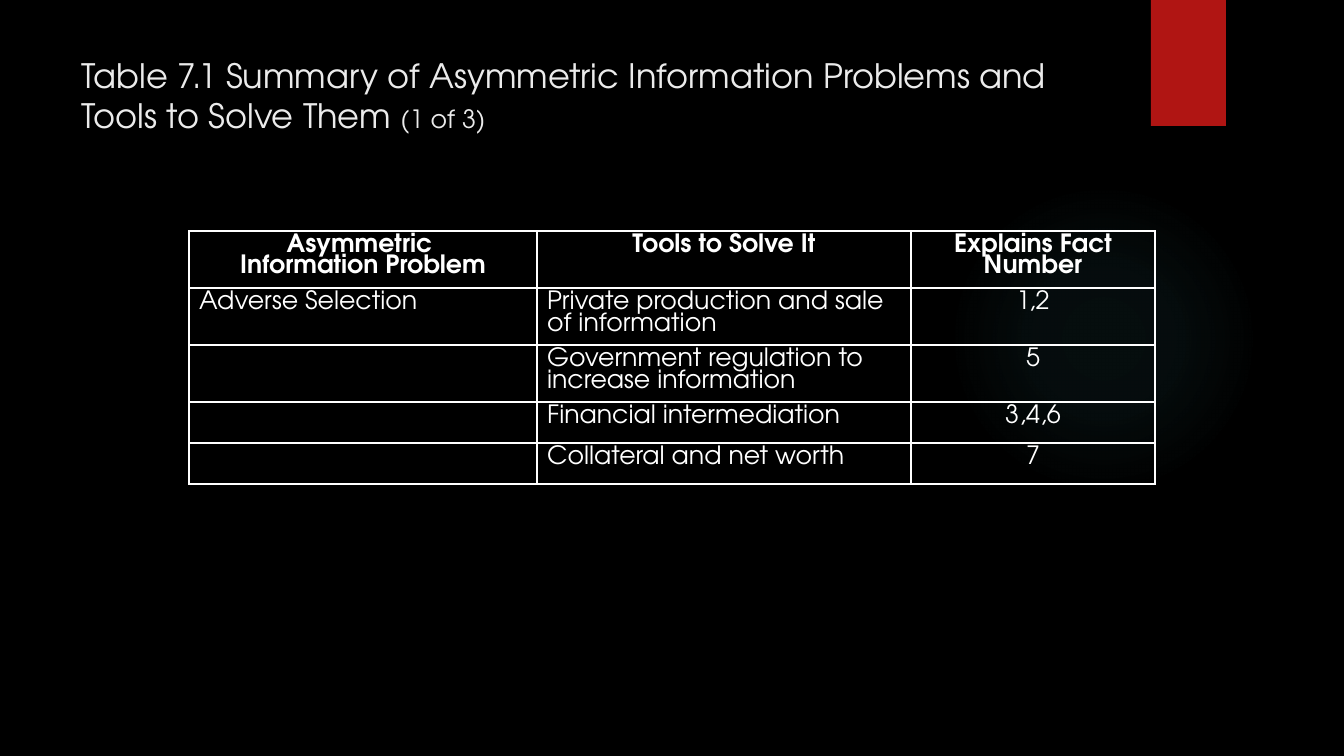
"""Build the slide that sums up adverse selection problems and their tools."""
from lxml import etree
from pptx import Presentation
from pptx import util as u
from pptx.dml.color import RGBColor
from pptx.enum import shapes, text
from pptx.oxml import parse_xml
from pptx.oxml.ns import nsdecls, qn

TITLE = [
    ("Table 7.1 Summary of Asymmetric Information Problems and Tools to Solve Them ", 24),
    ("(1 of 3)", 18),
]
ROWS = [
    ("Asymmetric \nInformation Problem", "Tools to Solve It", "Explains Fact Number"),
    ("Adverse Selection", "Private production and sale of information", "1,2"),
    ("", "Government regulation to increase information", "5"),
    ("", "Financial intermediation", "3,4,6"),
    ("", "Collateral and net worth", "7"),
]
COLUMN_WIDTHS = [348, 374, 244]
ROW_HEIGHTS = [57, 57, 57, 41, 41]
GLOW_STOPS = [(0, 7), (36, 6), (69, 0)]
COLORS = {"back": "000000", "title": "EBEBEB", "table": "FFFFFF",
          "ribbon": "B01513", "glow": "50B9C1"}
FONT = "TeX Gyre Adventor"
PX = 914400 / 100.8


def px(*lengths):
    return [u.Emu(round(length * PX)) for length in lengths]


def color(name):
    return RGBColor.from_string(COLORS[name])


def add_text(para, words, size=18, ink="table", bold=False, align=text.PP_ALIGN.LEFT):
    para.alignment = align
    for index, line in enumerate(words.split("\n")):
        if index:
            para.add_line_break()
        span = para.add_run()
        span.text = line
        span.font.name = FONT
        span.font.size = u.Pt(size)
        span.font.bold = bold
        span.font.color.rgb = color(ink)


def add_decor(page, kind, *place):
    shape = page.shapes.add_shape(kind, *px(*place))
    shape.shadow.inherit = False
    shape.line.fill.background()
    return shape


def fill_glow(shape):
    stops = "".join(
        f'<a:gs pos="{place * 1000}"><a:srgbClr val="{COLORS["glow"]}">'
        f'<a:alpha val="{alpha * 1000}"/></a:srgbClr></a:gs>'
        for place, alpha in GLOW_STOPS)
    gradient = parse_xml(
        f'<a:gradFill {nsdecls("a")} rotWithShape="1"><a:gsLst>{stops}</a:gsLst>'
        '<a:path path="circle"><a:fillToRect l="50000" t="50000" r="50000" b="50000"/>'
        '</a:path></a:gradFill>')
    shape.fill.background()
    properties = shape.element.spPr
    properties.replace(properties.find(qn("a:noFill")), gradient)


def add_borders(cell):
    properties = cell._tc.get_or_add_tcPr()
    for index, side in enumerate(("lnL", "lnR", "lnT", "lnB")):
        line = etree.Element(qn(f"a:{side}"), w=str(u.Pt(1)))
        fill = etree.SubElement(line, qn("a:solidFill"))
        etree.SubElement(fill, qn("a:srgbClr"), val=COLORS["table"])
        properties.insert(index, line)


def add_title(page):
    title = page.shapes.title
    title.left, title.top, title.width, title.height = px(71, 50, 1038, 154)
    frame = title.text_frame
    frame.word_wrap = True
    frame.auto_size = text.MSO_AUTO_SIZE.NONE
    frame.vertical_anchor = text.MSO_ANCHOR.TOP
    for words, size in TITLE:
        add_text(frame.paragraphs[0], words, size=size, ink="title")


def add_summary(page):
    place = px(189, 231, sum(COLUMN_WIDTHS), sum(ROW_HEIGHTS))
    table = page.shapes.add_table(len(ROWS), len(COLUMN_WIDTHS), *place).table
    table.first_row = table.horz_banding = False
    for column, width in zip(table.columns, px(*COLUMN_WIDTHS)):
        column.width = width
    for row, height in zip(table.rows, px(*ROW_HEIGHTS)):
        row.height = height
    for r, row in enumerate(ROWS):
        for c, words in enumerate(row):
            cell = table.cell(r, c)
            cell.fill.background()
            add_borders(cell)
            para = cell.text_frame.paragraphs[0]
            para.line_spacing = 0.9
            centred = r == 0 or c == 2
            if words:
                add_text(para, words, bold=r == 0,
                         align=text.PP_ALIGN.CENTER if centred else text.PP_ALIGN.LEFT)


def main():
    deck = Presentation()
    deck.slide_width, deck.slide_height = px(1344, 756)
    page = deck.slides.add_slide(deck.slide_layouts[5])
    page.background.fill.solid()
    page.background.fill.fore_color.rgb = color("back")
    fill_glow(add_decor(page, shapes.MSO_SHAPE.OVAL, 949, 184, 310, 310))
    ribbon = add_decor(page, shapes.MSO_SHAPE.RECTANGLE, 1151, 0, 75, 126)
    ribbon.fill.solid()
    ribbon.fill.fore_color.rgb = color("ribbon")
    add_title(page)
    add_summary(page)
    deck.save("out.pptx")


if __name__ == "__main__":
    main()
